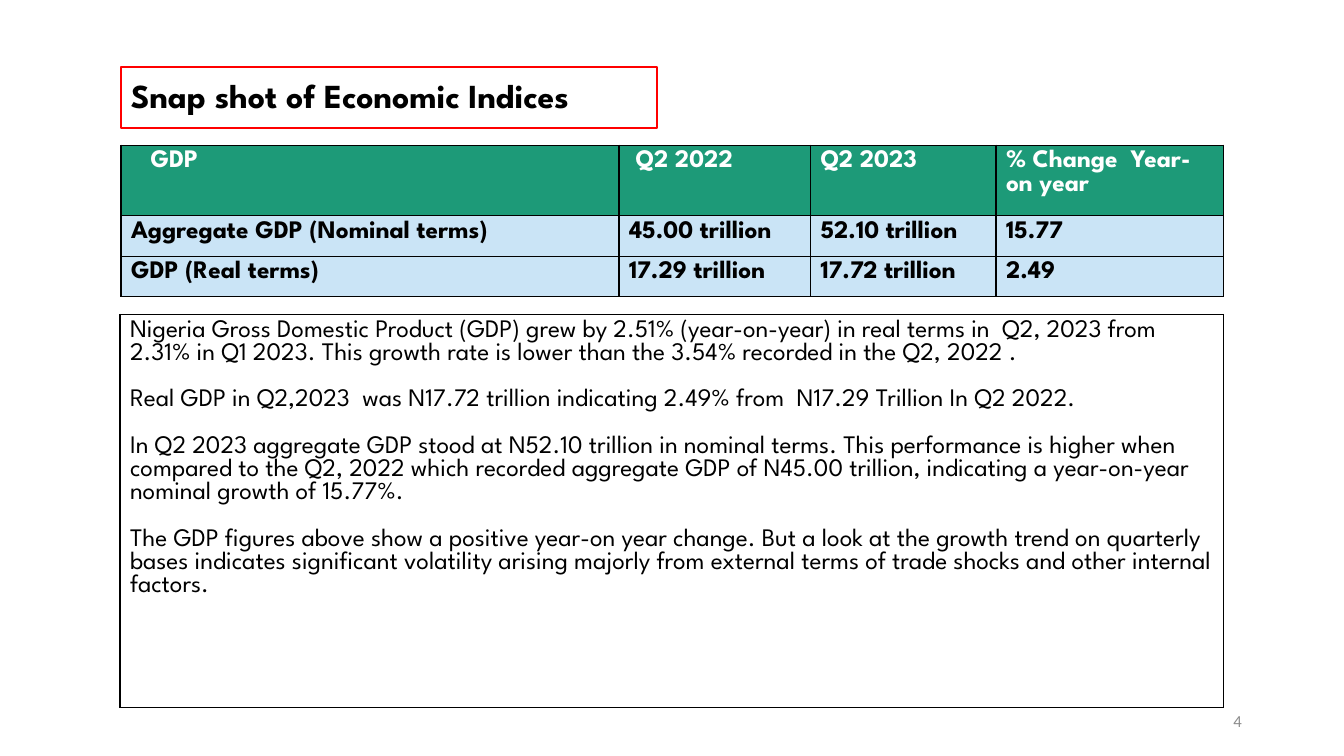
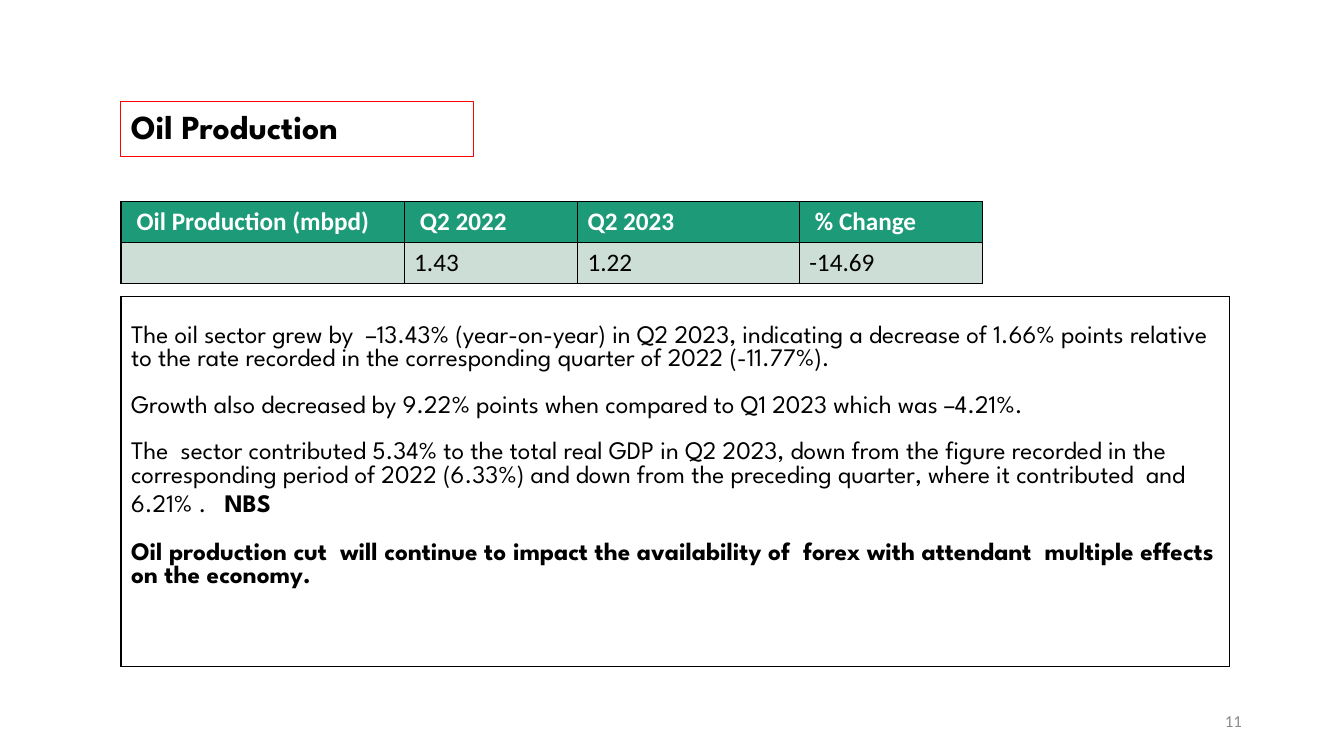
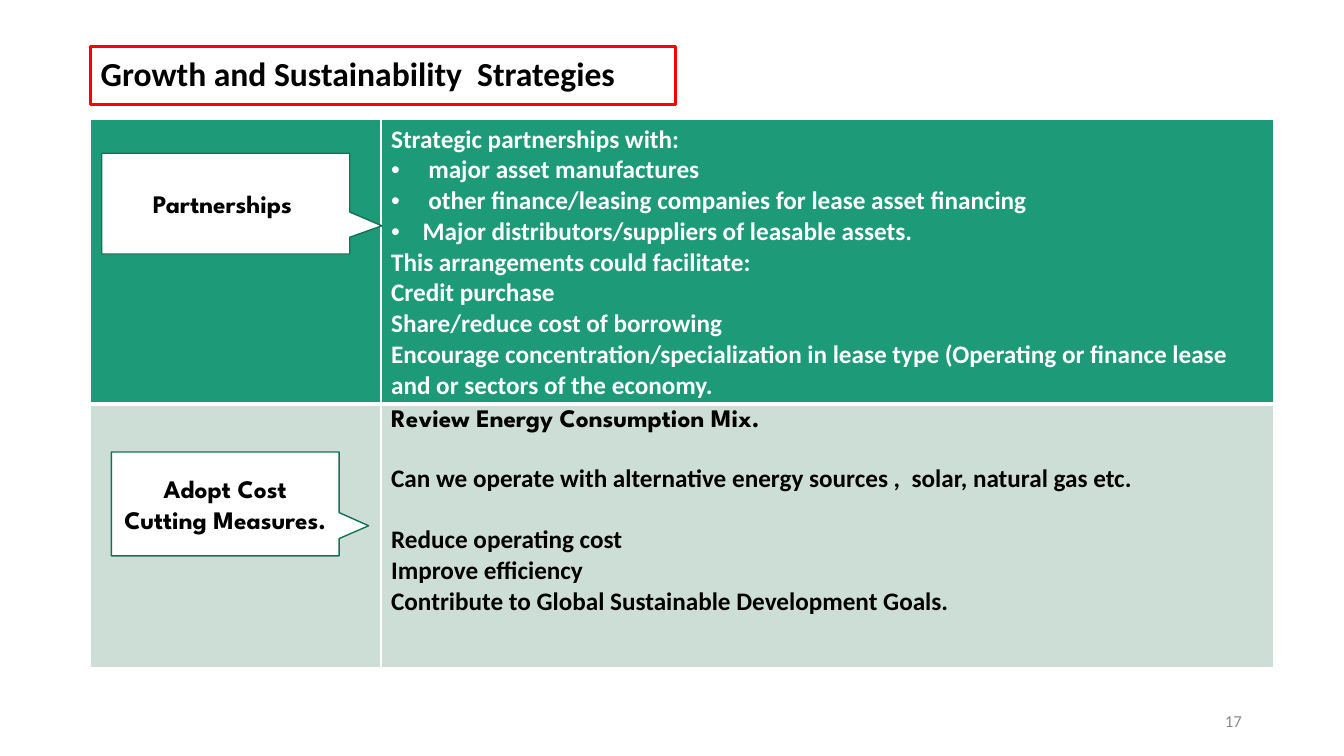
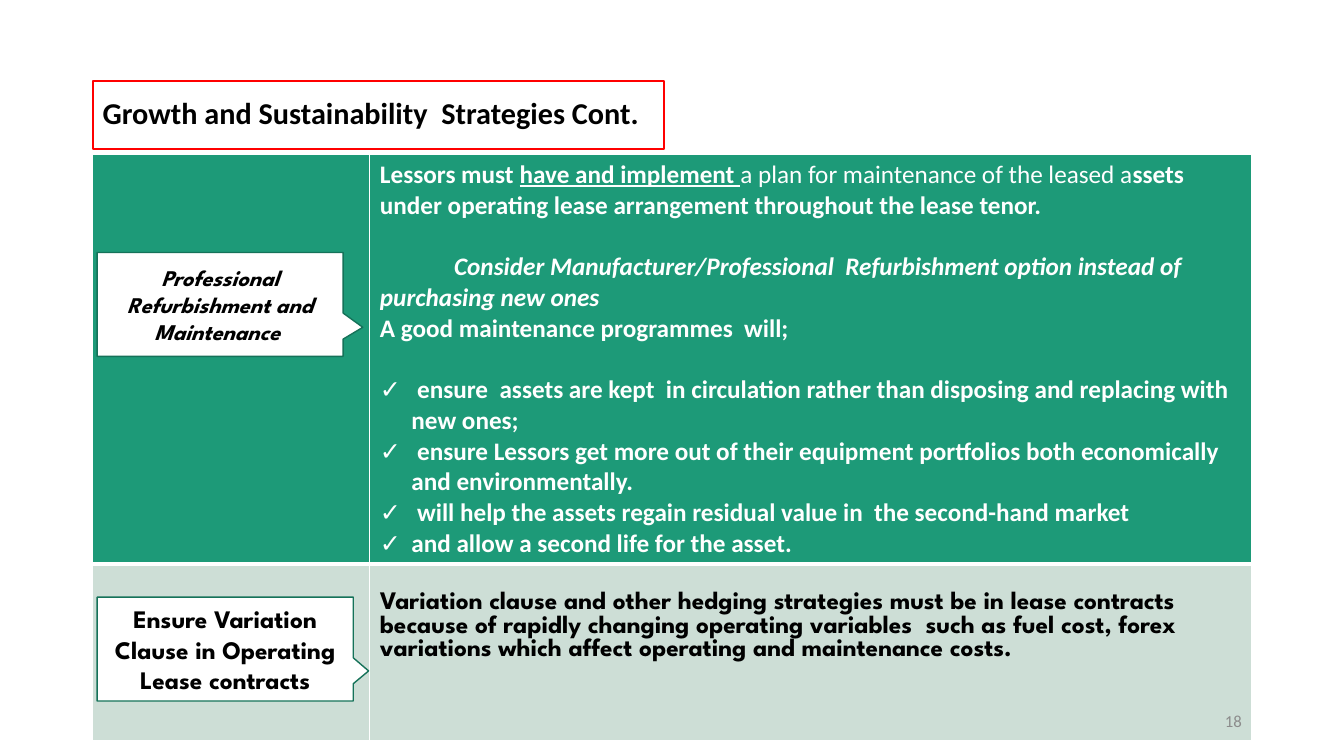
"""Build four slides on economic indices and leasing strategies."""
from lxml.etree import SubElement as Sub
from pptx import Presentation
from pptx.dml.color import RGBColor as RGB
from pptx.enum.shapes import MSO_SHAPE as Kind
from pptx.enum.text import MSO_ANCHOR as Anchor, PP_ALIGN as Align
from pptx.oxml.ns import qn
from pptx.util import Pt

HUES = {
    "black": "000000", "white": "FFFFFF", "red": "FF0000", "gray": "8C8C8C",
    "green": "1D9A78", "pale": "CDDED6", "sky": "CAE4F6", "edge": "157259",
}
SPARTAN, PLAIN = "League Spartan", "Calibri"
BODY = {"name": SPARTAN, "size": Pt(18), "color": "black"}
BOLD = {**BODY, "bold": True}
HEAD = {**BOLD, "color": "white"}
LIGHT = {**HEAD, "name": PLAIN}
DARK = {**LIGHT, "color": "black"}
GAP = {"space_before": Pt(16.7)}
WIDE = {"space_before": Pt(22)}
GRID = dict.fromkeys("LRTB", 1)
UPPER, LOWER = {**GRID, "B": 3}, {**GRID, "T": 3}


def hue(name):
    """Return a named colour."""
    return RGB.from_string(HUES[name])


def style(font, look):
    """Set the font attributes in look."""
    for key, val in look.items():
        if key == "color":
            font.color.rgb = hue(val)
        else:
            setattr(font, key, val)


def indent(para, left, first, mark=None):
    """Set the indents of a paragraph and its bullet, if any."""
    props = para._p.get_or_add_pPr()
    props.set("marL", str(Pt(left)))
    props.set("indent", str(Pt(first)))
    if mark:
        Sub(props, qn("a:buFont")).set("typeface", "Arial")
        Sub(props, qn("a:buChar")).set("char", mark)


def write(frame, paras, look):
    """Fill a frame with paragraphs, each a string or (runs, format)."""
    for num, item in enumerate(paras):
        runs, form = (item, {}) if isinstance(item, str) else item
        para = frame.add_paragraph() if num else frame.paragraphs[0]
        for key, val in form.items():
            if key == "indent":
                indent(para, *val)
            else:
                setattr(para, key, val)
        for text, more in [(runs, {})] if isinstance(runs, str) else runs:
            run = para.add_run()
            run.text = text
            style(run.font, {**look, **more})


def label(slide, spot, text, look, form):
    """Add a one-paragraph text box, centred in height."""
    box = slide.shapes.add_textbox(*map(Pt, spot))
    box.text_frame.word_wrap = True
    box.text_frame.vertical_anchor = Anchor.MIDDLE
    write(box.text_frame, [(text, form)], look)
    return box


def title(slide, spot, text, width, **more):
    """Add the red-framed title."""
    look = {**BOLD, "size": Pt(24), **more}
    box = label(slide, spot, text, look, {"line_spacing": 0.9})
    box.line.color.rgb = hue("red")
    box.line.width = Pt(width)


def number(slide, num):
    """Add the page number."""
    look = {"name": PLAIN, "size": Pt(12), "color": "gray"}
    label(slide, (678.2, 500.4, 216, 28.8), str(num), look,
          {"alignment": Align.RIGHT})


def frame(cell, color, sides):
    """Draw the borders of a cell."""
    props = cell._tc.get_or_add_tcPr()
    for side, width in sides.items():
        line = Sub(props, qn(f"a:ln{side}"), w=str(Pt(width)))
        fill = Sub(line, qn("a:solidFill"))
        Sub(fill, qn("a:srgbClr")).set("val", HUES[color])


def table(slide, spot, cols, rows, line="black"):
    """Add a table; a row is (height, fill, look, sides, top, cells)."""
    size = sum(cols), sum(row[0] for row in rows)
    grid = slide.shapes.add_table(
        len(rows), len(cols), *map(Pt, (*spot, *size))).table
    grid.first_row = grid.horz_banding = False
    for col, width in zip(grid.columns, cols):
        col.width = Pt(width)
    for row, (high, fill, look, sides, top, cells) in zip(grid.rows, rows):
        row.height = Pt(high)
        for cell, paras in zip(row.cells, cells):
            frame(cell, line, sides)
            if fill:
                cell.fill.solid()
                cell.fill.fore_color.rgb = hue(fill)
            else:
                cell.fill.background()
            cell.margin_top = Pt(top)
            write(cell.text_frame, paras, look)


def data(slide, spot, cols, rows):
    """Add a table of one-line cells, from rows (height, fill, look, texts)."""
    table(slide, spot, cols, [
        (high, fill, look, GRID, 3.6, [[text] if text else [] for text in texts])
        for high, fill, look, texts in rows])


def panel(slide, spot, width, high, paras, top=3.6):
    """Add a framed block of text."""
    table(slide, spot, [width], [(high, None, BODY, GRID, top, [paras])])


def plan(slide, spot, cols, highs, upper, lower, top=3.6):
    """Add the two-row strategy table."""
    table(slide, spot, cols, [
        (highs[0], "green", LIGHT, UPPER, 3.6, [[], upper]),
        (highs[1], "pale", DARK, LOWER, top, [[], lower]),
    ], "white")


def callout(slide, spot, text, tail, **more):
    """Add a callout that points right."""
    shape = slide.shapes.add_shape(Kind.RECTANGULAR_CALLOUT, *map(Pt, spot))
    shape.rotation = 270
    shape.shadow.inherit = False
    for num, val in enumerate(tail):
        shape.adjustments[num] = val
    shape.fill.solid()
    shape.fill.fore_color.rgb = hue("white")
    shape.line.color.rgb = hue("edge")
    shape.line.width = Pt(1)
    shape.element.txBody.bodyPr.set("vert", "vert")
    shape.text_frame.word_wrap = True
    shape.text_frame.vertical_anchor = Anchor.MIDDLE
    write(shape.text_frame, [(text, {"alignment": Align.CENTER})],
          {**BOLD, **more})


def listed(mark, texts):
    """Return bulleted paragraphs."""
    return [(text, {"indent": (22.5, -22.5, mark)}) for text in texts]


def indices(slide):
    """Fill the slide on GDP."""
    title(slide, (86.4, 48.2, 383, 43.2), "Snap shot of Economic Indices", 1.5)
    data(slide, (86.4, 103.7), (355.7, 136.8, 132.5, 162.7), [
        (43.9, "green", HEAD, [("GDP", {"indent": (14, 0)}), " Q2 2022",
                               "Q2 2023", "% Change  Year-on year"]),
        (25.2, "sky", BOLD, ["Aggregate GDP (Nominal terms)",
                             "45.00 trillion", "52.10 trillion", "15.77"]),
        (25.2, "sky", BOLD, ["GDP (Real terms)",
                             "17.29 trillion", "17.72 trillion", "2.49"]),
    ])
    panel(slide, (85.7, 224.6), 788.4, 280.8, [
        "Nigeria Gross Domestic Product (GDP) grew by 2.51% (year-on-year) in "
        "real terms in  Q2, 2023 from 2.31% in Q1 2023. This growth rate is "
        "lower than the 3.54% recorded in the Q2, 2022 .",
        ("Real GDP in Q2,2023  was N17.72 trillion indicating 2.49% from  "
         "N17.29 Trillion In Q2 2022.", GAP),
        ("In Q2 2023 aggregate GDP stood at N52.10 trillion in nominal terms. "
         "This performance is higher when compared to the Q2, 2022 which "
         "recorded aggregate GDP of N45.00 trillion, indicating a "
         "year-on-year nominal growth of 15.77%.", GAP),
        ("The GDP figures above show a positive year-on year change. But a "
         "look at the growth trend on quarterly bases indicates significant "
         "volatility arising majorly from external terms of trade shocks and "
         "other internal factors.", GAP),
    ])
    number(slide, 4)


def oil(slide):
    """Fill the slide on oil production."""
    title(slide, (86.4, 72.7, 252, 38.9), "Oil Production", 0.75)
    data(slide, (86.4, 144), (202.3, 123.8, 158.4, 131), [
        (29.2, "green", LIGHT, [" Oil Production (mbpd)", " Q2 2022",
                                "Q2 2023", " % Change"]),
        (29.2, "pale", {**DARK, "bold": False}, ["", "1.43", "1.22", "-14.69"]),
    ])
    panel(slide, (86.4, 211.7), 792, 264.2, [
        "The oil sector grew by  –13.43% (year-on-year) in Q2 2023, indicating "
        "a decrease of 1.66% points relative to the rate recorded in the "
        "corresponding quarter of 2022 (-11.77%).",
        ("Growth also decreased by 9.22% points when compared to Q1 2023 "
         "which was –4.21%.", GAP),
        ([("The  sector contributed 5.34% to the total real GDP in Q2 2023, "
           "down from the figure recorded in the corresponding period of 2022 "
           "(6.33%) and down from the preceding quarter, where it contributed  "
           "and 6.21% .", {}),
          ("  ", {"name": PLAIN}), (" NBS", {"bold": True})], GAP),
        ([("Oil production cut  will continue to impact the availability of  "
           "forex with attendant  multiple effects on the economy.",
           {"bold": True})], GAP),
    ], 21)
    number(slide, 11)


def growth(slide):
    """Fill the first strategy slide."""
    title(slide, (64.8, 33.1, 417.6, 41.8),
          "Growth and Sustainability  Strategies", 2.25, name=PLAIN)
    plan(slide, (64.8, 85), (207.4, 637.9), (203.8, 187.9), [
        "Strategic partnerships with:",
        *listed("•", [
            " major asset manufactures",
            " other finance/leasing companies for lease asset financing",
            "Major distributors/suppliers of leasable assets."]),
        "This arrangements could facilitate:",
        "Credit purchase",
        "Share/reduce cost of borrowing",
        "Encourage concentration/specialization in lease type (Operating or "
        "finance lease and or sectors of the economy.",
    ], [
        ([("Review Energy Consumption Mix.", {"name": SPARTAN})], {}),
        ("Can we operate with alternative energy sources ,  solar, natural "
         "gas etc.", WIDE),
        ("Reduce operating cost", WIDE),
        "Improve efficiency",
        "Contribute to Global Sustainable Development Goals.",
    ])
    callout(slide, (125.3, 56.9, 72, 177.1), "Partnerships ", (-0.22, 0.63))
    callout(slide, (123.8, 278.6, 74.2, 162.7),
            "Adopt Cost Cutting Measures. ", (-0.21, 0.63))
    number(slide, 17)


def upkeep(slide):
    """Fill the second strategy slide."""
    title(slide, (66.2, 57.6, 408.2, 49),
          "Growth and Sustainability  Strategies Cont.", 1.5,
          name=PLAIN, size=Pt(21.6))
    plan(slide, (66.2, 110.2), (198, 630), (292.5, 126), [
        ([("Lessors must ", {}), ("have and implement ", {"underline": True}),
          ("a plan for maintenance of the leased a", {"bold": False}),
          ("ssets under operating lease arrangement throughout the lease "
           "tenor.", {})], {}),
        ([("Consider Manufacturer/Professional  Refurbishment option instead "
           "of purchasing new ones", {"italic": True})],
         {**WIDE, "indent": (0, 53)}),
        "A good maintenance programmes  will;",
        *[(text, {**form, **(WIDE if num == 0 else {})})
          for num, (text, form) in enumerate(listed("✓", [
              " ensure  assets are kept  in circulation rather than disposing "
              "and replacing with new ones;",
              " ensure Lessors get more out of their equipment portfolios both "
              "economically and environmentally.",
              " will help the assets regain residual value in  the second-hand "
              "market",
              "and allow a second life for the asset."]))],
    ], [
        ([("Variation clause and other hedging strategies must be in lease "
           "contracts  because of rapidly changing operating variables  such "
           "as fuel cost, forex variations which affect operating and "
           "maintenance costs.", {"name": SPARTAN})], {}),
    ], 20.3)
    callout(slide, (123.8, 372.2, 74.2, 182.9),
            "Ensure Variation Clause in Operating Lease contracts",
            (-0.21, 0.56))
    callout(slide, (120.2, 129.6, 74.2, 175.7),
            "Professional Refurbishment and Maintenance ", (-0.22, 0.58),
            size=Pt(16), italic=True)
    number(slide, 18)


def main():
    """Build and save the deck."""
    deck = Presentation()
    deck.slide_width, deck.slide_height = Pt(960), Pt(540)
    for fill in (indices, oil, growth, upkeep):
        fill(deck.slides.add_slide(deck.slide_layouts[6]))
    deck.save("out.pptx")


if __name__ == "__main__":
    main()
